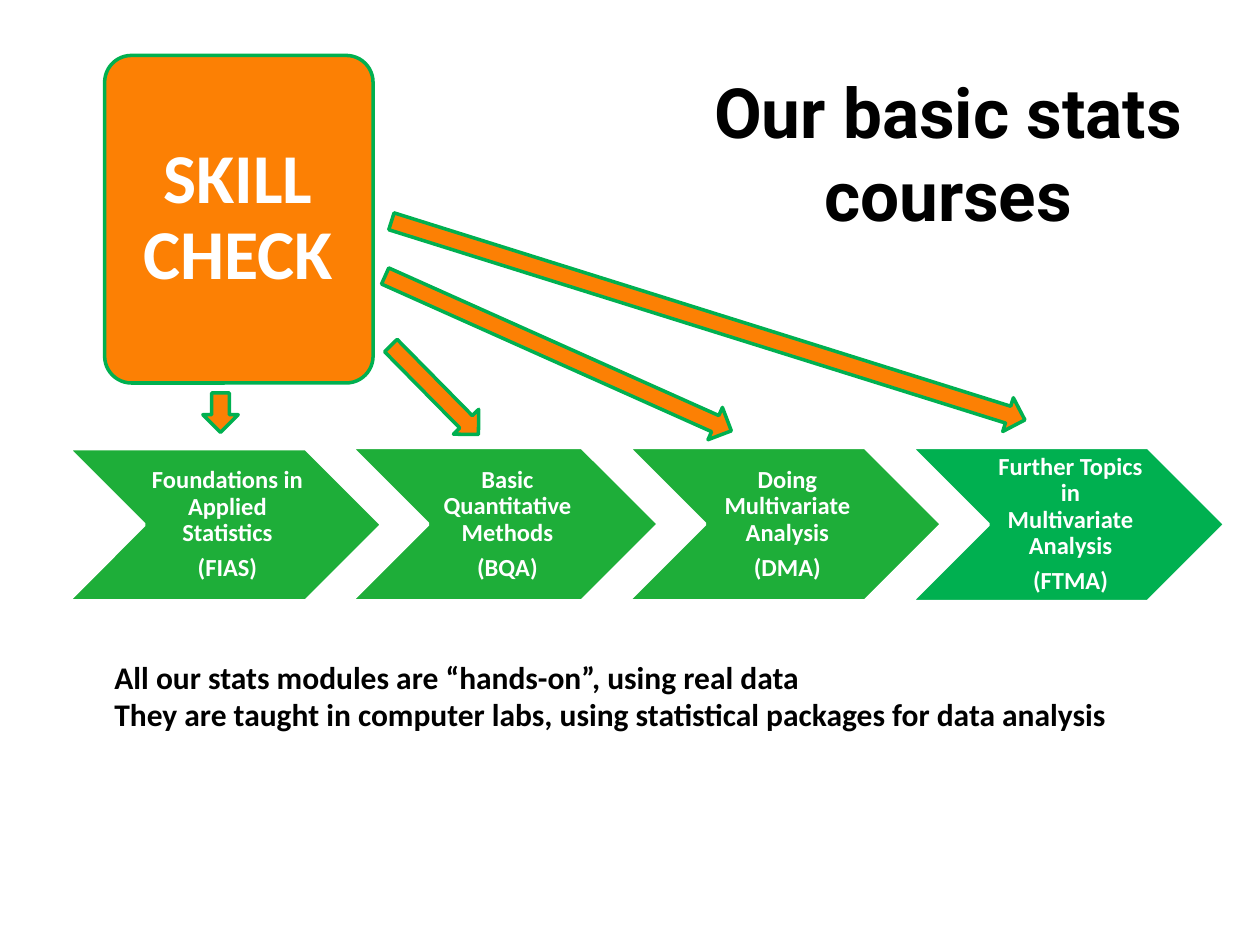
from dataclasses import dataclass

from pptx import Presentation
from pptx.dml.color import RGBColor
from pptx.enum.shapes import MSO_SHAPE as Preset
from pptx.enum.text import MSO_ANCHOR as Anchor, MSO_AUTO_SIZE as AutoSize, PP_ALIGN as Align
from pptx.shapes.autoshape import Shape
from pptx.slide import Slide
from pptx.text.text import TextFrame
from pptx.util import Pt


@dataclass(frozen=True)
class Theme:
    black: RGBColor = RGBColor(0x00, 0x00, 0x00)
    white: RGBColor = RGBColor(0xFF, 0xFF, 0xFF)
    orange: RGBColor = RGBColor(0xFC, 0x80, 0x04)
    green: RGBColor = RGBColor(0x00, 0xB0, 0x50)
    leaf: RGBColor = RGBColor(0x1E, 0xAE, 0x39)
    title_font: str = "Roboto"
    body_font: str = "Calibri"
    title_size: float = 39.6
    card_size: float = 40
    note_size: float = 18
    course_size: float = 14
    line_width: float = 2


@dataclass(frozen=True)
class Box:
    left: float
    top: float
    width: float
    height: float

    def lengths(self) -> tuple[Pt, Pt, Pt, Pt]:
        return Pt(self.left), Pt(self.top), Pt(self.width), Pt(self.height)


@dataclass(frozen=True)
class Course:
    name: str
    code: str
    width: float
    top: float
    height: float
    fill: RGBColor


@dataclass(frozen=True)
class Arrow:
    box: Box
    rotation: float = 0


THEME = Theme()
CHEVRON_LEFT = 38.9
CHEVRON_OVERLAP = 17.5

COURSES = (
    Course("Foundations in Applied Statistics", "(FIAS)", 179.3, 256.3, 87.1, THEME.leaf),
    Course("Basic Quantitative Methods", "(BQA)", 175.7, 255.6, 87.8, THEME.leaf),
    Course("Doing Multivariate Analysis", "(DMA)", 179.3, 255.6, 87.8, THEME.leaf),
    Course("Further Topics in Multivariate Analysis", "(FTMA)", 179.3, 255.6, 88.2, THEME.green),
)

ARROWS = (
    Arrow(Box(115.9, 224.6, 20.2, 22.5)),
    Arrow(Box(238.3, 187.2, 20.2, 71.3), 315.4),
    Arrow(Box(308.9, 93.6, 20.2, 216.7), 294.1),
    Arrow(Box(394.6, -6.5, 20.2, 379.4), 287.4),
)

NOTES = (
    "All our stats modules are “hands-on”, using real data",
    "They are taught in computer labs, using statistical packages for data analysis",
)


def write(frame: TextFrame, lines: tuple[str, ...], font: str, size: float,
          color: RGBColor, align: Align, spacing: float = 1, after: float = 0) -> None:
    frame.word_wrap = True
    for index, line in enumerate(lines):
        paragraph = frame.add_paragraph() if index else frame.paragraphs[0]
        paragraph.alignment = align
        paragraph.line_spacing = spacing
        paragraph.space_before = Pt(0)
        paragraph.space_after = Pt(after)
        run = paragraph.add_run()
        run.text = line
        run.font.name = font
        run.font.size = Pt(size)
        run.font.bold = True
        run.font.color.rgb = color


def add_preset(slide: Slide, preset: Preset, box: Box, fill: RGBColor, line: RGBColor) -> Shape:
    shape = slide.shapes.add_shape(preset, *box.lengths())
    shape.shadow.inherit = False
    shape.fill.solid()
    shape.fill.fore_color.rgb = fill
    shape.line.color.rgb = line
    shape.line.width = Pt(THEME.line_width)
    return shape


def add_label(slide: Slide, box: Box, lines: tuple[str, ...], size: float,
              insets: tuple[float, float, float, float]) -> None:
    frame = slide.shapes.add_textbox(*box.lengths()).text_frame
    frame.vertical_anchor = Anchor.MIDDLE
    frame.margin_left, frame.margin_top, frame.margin_right, frame.margin_bottom = map(Pt, insets)
    write(frame, lines, THEME.body_font, size, THEME.white, Align.CENTER, 0.9, size * 0.35)


def add_title(slide: Slide) -> None:
    title = slide.shapes.title
    title.left, title.top, title.width, title.height = Box(399.6, 41.8, 284.4, 90).lengths()
    title.text_frame.auto_size = AutoSize.NONE
    title.text_frame.vertical_anchor = Anchor.MIDDLE
    write(title.text_frame, ("Our basic stats courses",), THEME.title_font,
          THEME.title_size, THEME.black, Align.CENTER)


def add_courses(slide: Slide) -> None:
    left = CHEVRON_LEFT
    for course in COURSES:
        box = Box(left, course.top, course.width, course.height)
        add_preset(slide, Preset.CHEVRON, box, course.fill, THEME.white)
        text_box = Box(left + course.height / 2, course.top,
                       course.width - course.height, course.height)
        add_label(slide, text_box, (course.name, course.code), THEME.course_size,
                  (4.2, 1.4, 1.4, 1.4))
        left += course.width - CHEVRON_OVERLAP


def add_skill_check(slide: Slide) -> None:
    card = add_preset(slide, Preset.ROUNDED_RECTANGLE, Box(59.8, 31.7, 153.4, 187.2),
                      THEME.orange, THEME.green)
    card.adjustments[0] = 0.1
    add_label(slide, Box(62.2, 36.7, 147.6, 176.4), ("SKILL CHECK",), THEME.card_size,
              (5, 5, 5, 5))


def add_notes_text(slide: Slide) -> None:
    frame = slide.shapes.add_textbox(*Box(58.3, 372.2, 601.9, 51.1).lengths()).text_frame
    frame.auto_size = AutoSize.SHAPE_TO_FIT_TEXT
    write(frame, NOTES, THEME.body_font, THEME.note_size, THEME.black, Align.LEFT)


def add_arrows(slide: Slide) -> None:
    for arrow in ARROWS:
        shape = add_preset(slide, Preset.DOWN_ARROW, arrow.box, THEME.orange, THEME.green)
        shape.rotation = arrow.rotation


def main() -> None:
    presentation = Presentation()
    presentation.slide_width, presentation.slide_height = Pt(720), Pt(540)
    slide = presentation.slides.add_slide(presentation.slide_layouts.get_by_name("Title Only"))
    add_title(slide)
    add_courses(slide)
    add_skill_check(slide)
    add_notes_text(slide)
    add_arrows(slide)
    presentation.save("out.pptx")


if __name__ == "__main__":
    main()
